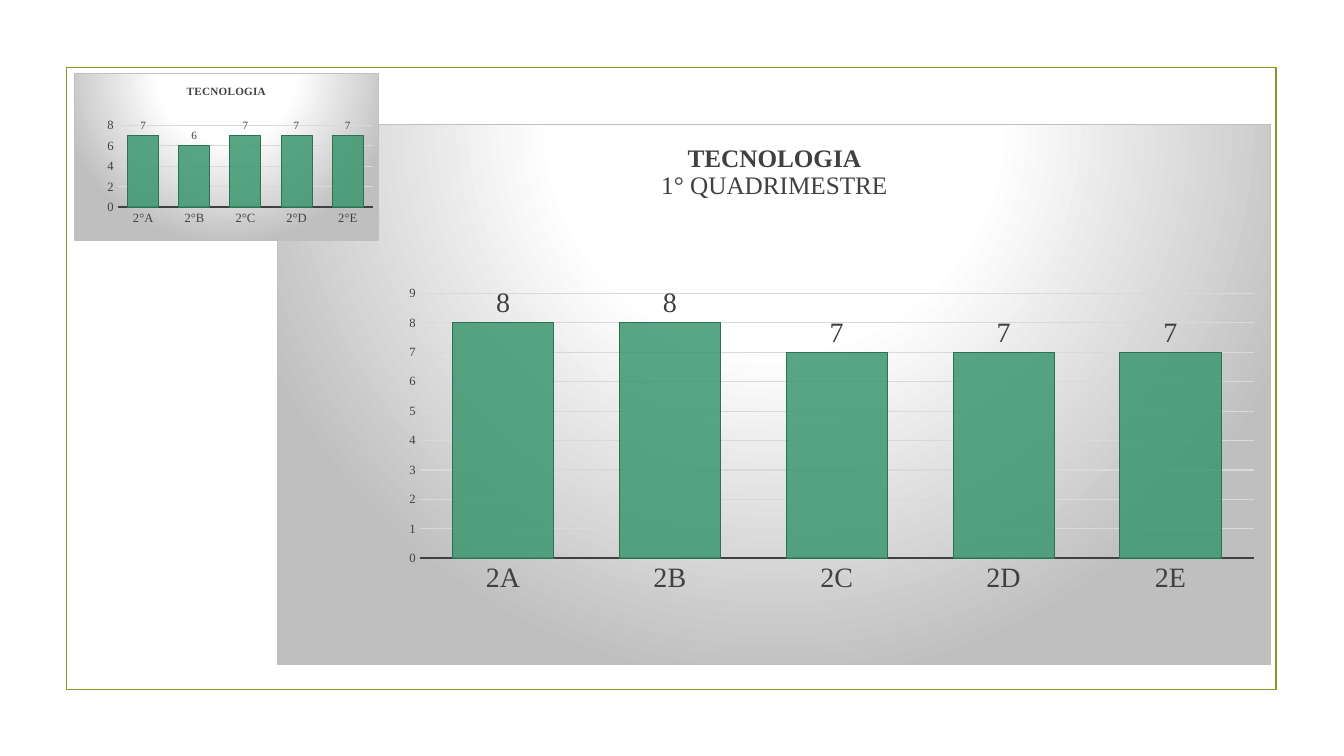
"""Build a slide with two technology grade charts, the small one over the large one."""
from lxml import etree
from pptx import Presentation
from pptx import util as u
from pptx.chart.data import CategoryChartData
from pptx.dml.color import RGBColor
from pptx.enum import chart as kinds, shapes
from pptx.oxml.ns import qn

SLIDE = (13.33, 7.5)
FRAME = (0.66, 0.67, 12, 6.17)
CHARTS = [
    {"place": (2.75, 1.23, 9.86, 5.37), "name": "Series 1",
     "title": [("TECNOLOGIA", True), ("1° QUADRIMESTRE", False)],
     "grades": {"2A": 8, "2B": 8, "2C": 7, "2D": 7, "2E": 7},
     "top": 9, "step": 1, "sizes": {"title": 18, "category": 20, "label": 20}},
    {"place": (0.73, 0.72, 3.03, 1.67), "name": "TECNOLOGIA",
     "title": [("TECNOLOGIA", True)],
     "grades": {"2°A": 7, "2°B": 6, "2°C": 7, "2°D": 7, "2°E": 7},
     "top": 8, "step": 2, "sizes": {"title": 8, "category": 9, "label": 8}},
]
PLOT = {"x": 0.143, "y": 0.313, "w": 0.84, "h": 0.49}
GLOW = [(0, "FFFFFF"), (39, "FFFFFF"), (100, "BFBFBF")]
GLOW_CENTRE = {"l": 50, "t": -80, "r": 50, "b": 180}
THEME = {"font": "Times New Roman", "text": "404040", "frame": "83992A", "grid": "D9D9D9",
         "border": "BFBFBF", "bar": "3C9770", "bar_edge": "2D7154", "bar_opacity": 85,
         "scale_size": 9, "thin": 0.75, "axis": 1.5, "frame_line": 1.25}


def inches(place):
    return [u.Inches(length) for length in place]


def style_font(font, size, bold=False):
    font.name, font.size, font.bold = THEME["font"], u.Pt(size), bold
    font.color.rgb = RGBColor.from_string(THEME["text"])


def style_line(line, color, width):
    line.color.rgb = RGBColor.from_string(THEME[color])
    line.width = u.Pt(THEME[width])


def add_child(parent, tag, **values):
    return etree.SubElement(parent, qn(tag), {key: str(value) for key, value in values.items()})


def fill_background(space):
    area = etree.Element(qn("c:spPr"))
    gradient = add_child(area, "a:gradFill", flip="none", rotWithShape=1)
    stops = add_child(gradient, "a:gsLst")
    for share, color in GLOW:
        add_child(add_child(stops, "a:gs", pos=share * 1000), "a:srgbClr", val=color)
    circle = add_child(gradient, "a:path", path="circle")
    add_child(circle, "a:fillToRect", **{side: share * 1000 for side, share in GLOW_CENTRE.items()})
    border = add_child(area, "a:ln", w=u.Pt(THEME["thin"]))
    add_child(add_child(border, "a:solidFill"), "a:srgbClr", val=THEME["border"])
    space.find(qn("c:chart")).addnext(area)


def place_plot(space):
    plot_area = space.find(qn("c:chart")).find(qn("c:plotArea"))
    for old in plot_area.findall(qn("c:layout")):
        plot_area.remove(old)
    layout = etree.Element(qn("c:layout"))
    manual = add_child(layout, "c:manualLayout")
    add_child(manual, "c:layoutTarget", val="inner")
    for side in "xy":
        add_child(manual, f"c:{side}Mode", val="edge")
    for side, share in PLOT.items():
        add_child(manual, f"c:{side}", val=share)
    plot_area.insert(0, layout)


def style_axes(chart, content):
    categories, scale = chart.category_axis, chart.value_axis
    for axis, size in ((categories, content["sizes"]["category"]), (scale, THEME["scale_size"])):
        axis.major_tick_mark = axis.minor_tick_mark = kinds.XL_TICK_MARK.NONE
        style_font(axis.tick_labels.font, size)
    style_line(categories.format.line, "text", "axis")
    scale.format.line.fill.background()
    scale.minimum_scale, scale.maximum_scale = 0, content["top"]
    scale.major_unit = content["step"]
    scale.has_major_gridlines = True
    style_line(scale.major_gridlines.format.line, "grid", "thin")


def style_bars(chart, label_size):
    plot = chart.plots[0]
    plot.gap_width, plot.vary_by_categories = 65, False
    bars = plot.series[0]
    bars.format.fill.solid()
    bars.format.fill.fore_color.rgb = RGBColor.from_string(THEME["bar"])
    tint = chart.element.xpath(".//c:ser/c:spPr/a:solidFill/a:srgbClr")[0]
    add_child(tint, "a:alpha", val=THEME["bar_opacity"] * 1000)
    style_line(bars.format.line, "bar_edge", "thin")
    labels = bars.data_labels
    labels.show_value = True
    labels.position = kinds.XL_LABEL_POSITION.OUTSIDE_END
    style_font(labels.font, label_size)


def add_grades(page, content):
    data = CategoryChartData()
    data.categories = list(content["grades"])
    data.add_series(content["name"], list(content["grades"].values()))
    chart = page.shapes.add_chart(
        kinds.XL_CHART_TYPE.COLUMN_CLUSTERED, *inches(content["place"]), data).chart
    style_font(chart.font, 10)
    chart.has_legend = False
    chart.has_title = True
    frame = chart.chart_title.text_frame
    for index, (words, bold) in enumerate(content["title"]):
        para = frame.add_paragraph() if index else frame.paragraphs[0]
        style_font(para.font, content["sizes"]["title"], bold)
        span = para.add_run()
        span.text = words
        style_font(span.font, content["sizes"]["title"], bold)
    chart.chart_title.include_in_layout = False
    style_axes(chart, content)
    style_bars(chart, content["sizes"]["label"])
    place_plot(chart.element)
    fill_background(chart.element)


def main():
    deck = Presentation()
    deck.slide_width, deck.slide_height = inches(SLIDE)
    page = deck.slides.add_slide(deck.slide_layouts[6])
    box = page.shapes.add_shape(shapes.MSO_SHAPE.RECTANGLE, *inches(FRAME))
    box.shadow.inherit = False
    box.fill.background()
    style_line(box.line, "frame", "frame_line")
    for content in CHARTS:
        add_grades(page, content)
    deck.save("out.pptx")


if __name__ == "__main__":
    main()
